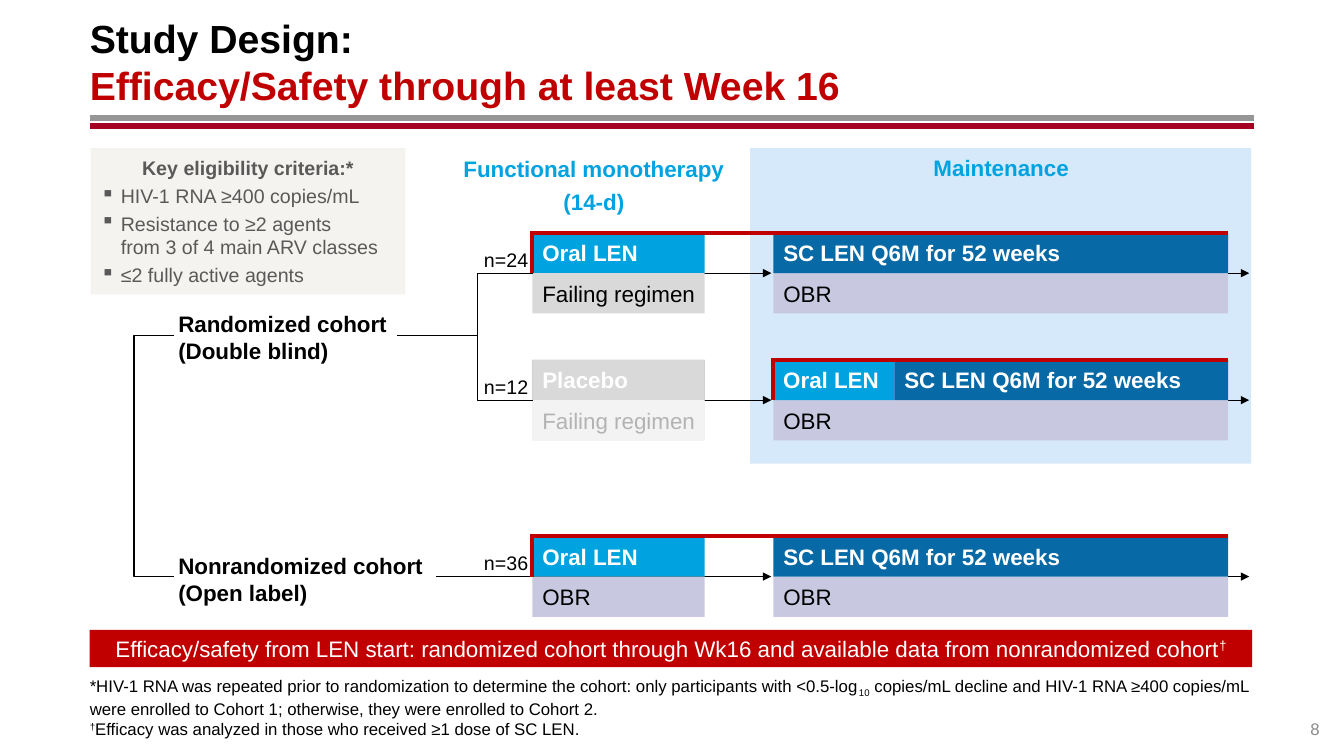
import pptx
import pptx.dml.color
import pptx.enum.shapes
import pptx.enum.text
import pptx.oxml
import pptx.oxml.ns
import pptx.util
from pptx.util import Inches

SHAPES = pptx.enum.shapes.MSO_SHAPE
ALIGN = pptx.enum.text.PP_ALIGN
ANCHOR = pptx.enum.text.MSO_ANCHOR
RED, CYAN, BLUE, LILAC, GREY = "C00000", "00A3E0", "0769A5", "C8C9E1", "D9D9D9"
BLACK, WHITE, DARK_GREY = "000000", "FFFFFF", "595959"
ROW = 0.4
FIRST_X, FIRST_W = 5.28, 1.71
MAINT_X, MAINT_W = 7.67, 4.51
RANDOM_Y, PLACEBO_Y, OPEN_Y = 2.71, 3.97, 5.72


def rgb(value):
    return pptx.dml.color.RGBColor.from_string(value)


def xml(tag, inner="", attributes=""):
    namespace = pptx.oxml.ns.nsdecls("a")
    return pptx.oxml.parse_xml(f"<a:{tag} {namespace} {attributes}>{inner}</a:{tag}>")


def color_xml(color):
    return f'<a:solidFill><a:srgbClr val="{color}"/></a:solidFill>'


def place(item, left, top, width, height):
    item.left, item.top = Inches(left), Inches(top)
    item.width, item.height = Inches(width), Inches(height)


def frame_of(item, anchor=ANCHOR.MIDDLE, insets=(0.1, 0.05, 0.1, 0.05), wrap=True):
    frame = item.text_frame
    frame.auto_size = pptx.enum.text.MSO_AUTO_SIZE.NONE
    frame.word_wrap = wrap
    frame.vertical_anchor = anchor
    frame.margin_left, frame.margin_top, frame.margin_right, frame.margin_bottom = map(Inches, insets)
    return frame


def add_run(paragraph, text, size, color, bold=False, baseline=0):
    run = paragraph.add_run()
    run.text = text
    run.font.name = "Arial"
    run.font.size = pptx.util.Pt(size)
    run.font.bold = bold
    run.font.color.rgb = rgb(color)
    if baseline:
        run.font._element.set("baseline", str(baseline * 1000))


def write(frame, lines, size, color, bold=False, align=ALIGN.LEFT, after=0):
    for number, line in enumerate(lines):
        paragraph = frame.add_paragraph() if number else frame.paragraphs[0]
        paragraph.alignment = align
        paragraph.space_after = pptx.util.Pt(after)
        add_run(paragraph, line, size, color, bold)


def add_rect(slide, left, top, width, height, fill):
    rect = slide.shapes.add_shape(SHAPES.RECTANGLE, *map(Inches, (left, top, width, height)))
    rect.shadow.inherit = False
    rect.line.fill.background()
    rect.fill.solid()
    rect.fill.fore_color.rgb = rgb(fill)
    return rect


def add_drug(slide, left, top, width, fill, text, color=WHITE, bold=True):
    drug = add_rect(slide, left, top, width, ROW, fill)
    write(frame_of(drug, wrap=False), [text], 16, color, bold)


def add_label(slide, at, lines, size, color, bold=False, align=ALIGN.LEFT, after=0, **frame):
    label = slide.shapes.add_textbox(*map(Inches, at))
    write(frame_of(label, **frame), lines, size, color, bold, align, after)


def add_line(slide, start, end, y, color=BLACK, width=0.75, arrow=False):
    line = slide.shapes.add_connector(
        pptx.enum.shapes.MSO_CONNECTOR.STRAIGHT, Inches(start), Inches(y), Inches(end), Inches(y))
    line.line.color.rgb = rgb(color)
    line.line.width = pptx.util.Pt(width)
    if arrow:
        line.line._get_or_add_ln().append(xml("tailEnd", attributes='type="triangle"'))
    line._element.spPr.append(xml("effectLst"))


def add_bracket(slide, left, top, width, height):
    bracket = slide.shapes.add_shape(SHAPES.RIGHT_BRACKET, *map(Inches, (left, top, width, height)))
    bracket.adjustments[0] = 0
    bracket.shadow.inherit = False
    bracket.fill.background()
    bracket.line.color.rgb = rgb(BLACK)
    bracket.line.width = pptx.util.Pt(0.75)
    bracket._element.spPr.get_or_add_xfrm().set("flipH", "1")


def add_period(slide, left, top, width):
    """Mark an analysed treatment period by a red left and top border."""
    table = slide.shapes.add_table(1, 1, *map(Inches, (left, top, width, ROW))).table
    table.first_row = table.horz_banding = False
    cell = table.cell(0, 0)
    cell.margin_left = cell.margin_right = cell.margin_top = cell.margin_bottom = 0
    cell.fill.background()
    properties = cell._tc.get_or_add_tcPr()
    borders = (("lnL", True), ("lnR", False), ("lnT", True), ("lnB", False))
    for position, (side, shown) in enumerate(borders):
        inner = color_xml(RED) if shown else "<a:noFill/>"
        properties.insert(position, xml(side, inner, 'w="38100"'))


def add_arm(slide, y, count, first, background):
    """Draw one arm: its arrows, patient count, first phase and background regimen."""
    add_line(slide, FIRST_X, MAINT_X - 0.02, y, arrow=True)
    add_line(slide, MAINT_X + MAINT_W, 12.39, y, arrow=True)
    add_label(slide, (4.77, y - 0.22, 0.5, 0.2), [count], 14, BLACK, align=ALIGN.CENTER,
              anchor=ANCHOR.BOTTOM, insets=(0, 0, 0, 0))
    add_drug(slide, FIRST_X, y - ROW, FIRST_W, *first)
    add_drug(slide, FIRST_X, y, FIRST_W, *background, BLACK, False)
    add_drug(slide, MAINT_X, y, MAINT_W, LILAC, "OBR", BLACK, False)


def add_title(slide):
    title = slide.shapes.title
    place(title, 0.89, 0.18, 11.55, 0.86)
    paragraph = frame_of(title, insets=(0, 0.05, 0.1, 0.05)).paragraphs[0]
    paragraph.alignment = ALIGN.LEFT
    add_run(paragraph, "Study Design:", 28, BLACK, True)
    paragraph.add_line_break()
    add_run(paragraph, "Efficacy/Safety through at least Week 16", 28, RED, True)


def add_footnotes(slide):
    notes = slide.placeholders[1]
    place(notes, 0.89, 6.83, 11.55, 0.5)
    frame = frame_of(notes, ANCHOR.BOTTOM, (0, 0, 0, 0))
    footnotes = (
        (("*HIV-1 RNA was repeated prior to randomization to determine the cohort: "
          "only participants with <0.5-log", 0), ("10", -25),
         (" copies/mL decline and HIV-1 RNA ≥400 copies/mL were enrolled to Cohort 1; "
          "otherwise, they were enrolled to Cohort 2.", 0)),
        (("†", 30), ("Efficacy was analyzed in those who received ≥1 dose of SC LEN.", 0)),
    )
    for number, parts in enumerate(footnotes):
        paragraph = frame.add_paragraph() if number else frame.paragraphs[0]
        paragraph.space_before = 0
        properties = paragraph._p.get_or_add_pPr()
        properties.set("marL", "0")
        properties.set("indent", "0")
        properties.append(xml("buNone"))
        for text, baseline in parts:
            add_run(paragraph, text, 12, BLACK, baseline=baseline)


def add_criteria(slide):
    frame = frame_of(add_rect(slide, 0.9, 1.47, 3.12, 1.45, "F5F3EF"))
    write(frame, ["Key eligibility criteria:*"], 14, DARK_GREY, True, ALIGN.CENTER)
    frame.paragraphs[0].space_before = pptx.util.Pt(3)
    criteria = (("HIV-1 RNA ≥400 copies/mL",),
                ("Resistance to ≥2 agents", "from 3 of 4 main ARV classes"),
                ("≤2 fully active agents",))
    for lines in criteria:
        paragraph = frame.add_paragraph()
        paragraph.alignment = ALIGN.LEFT
        paragraph.space_before = pptx.util.Pt(3)
        properties = paragraph._p.get_or_add_pPr()
        properties.set("marL", str(Inches(0.2)))
        properties.set("indent", str(Inches(-0.2)))
        properties.append(xml("buChar", attributes='char="▪"'))
        for number, line in enumerate(lines):
            if number:
                paragraph.add_line_break()
            add_run(paragraph, line, 14, DARK_GREY)


def main():
    deck = pptx.Presentation()
    deck.slide_width, deck.slide_height = Inches(13.33), Inches(7.5)
    slide = deck.slides.add_slide(deck.slide_layouts[1])
    add_title(slide)
    add_footnotes(slide)
    add_line(slide, 0.89, 12.44, 1.17, "969696", 4.25)
    add_line(slide, 0.89, 12.44, 1.25, "A50021", 4.25)
    add_rect(slide, 7.44, 1.47, 4.97, 3.13, "D5E9FA")
    phases = (((4.54, 1.48, 2.7, 0.71), ["Functional monotherapy", "(14-d)"]),
              ((8.43, 1.48, 3, 0.37), ["Maintenance"]))
    for at, lines in phases:
        add_label(slide, at, lines, 16, CYAN, True, ALIGN.CENTER, 4, insets=(0, 0.05, 0, 0.05))

    add_line(slide, 3.94, 4.74, 3.33)
    add_line(slide, 4.32, FIRST_X, OPEN_Y)
    oral, injection = (CYAN, "Oral LEN"), (BLUE, "SC LEN Q6M for 52 weeks")
    failing = (GREY, "Failing regimen")
    add_arm(slide, RANDOM_Y, "n=24", oral, failing)
    add_arm(slide, PLACEBO_Y, "n=12", ("808080", "Placebo"), failing)
    add_arm(slide, OPEN_Y, "n=36", oral, (LILAC, "OBR"))
    for y in (RANDOM_Y, OPEN_Y):
        add_drug(slide, MAINT_X, y - ROW, MAINT_W, *injection)
        add_period(slide, FIRST_X, y - ROW, MAINT_X + MAINT_W - FIRST_X)
    add_drug(slide, MAINT_X, PLACEBO_Y - ROW, 1.2, *oral)
    add_drug(slide, MAINT_X + 1.2, PLACEBO_Y - ROW, MAINT_W - 1.2, *injection)
    add_period(slide, MAINT_X, PLACEBO_Y - ROW, MAINT_W)
    veil = add_rect(slide, FIRST_X, PLACEBO_Y - ROW, FIRST_W, 2 * ROW, WHITE)
    veil.fill._xPr.find(".//" + pptx.oxml.ns.qn("a:srgbClr")).append(xml("alpha", attributes='val="70000"'))

    add_label(slide, (1.67, 3.02, 2.52, 0.64), ["Randomized cohort", "(Double blind)"], 16, BLACK, True)
    open_cohort = add_rect(slide, 1.67, 5.34, 2.65, 0.81, WHITE)
    write(frame_of(open_cohort), ["Nonrandomized cohort (Open label)"], 16, BLACK, True)
    add_bracket(slide, 4.74, RANDOM_Y, 0.55, PLACEBO_Y - RANDOM_Y)
    add_bracket(slide, 1.33, 3.33, 0.4, OPEN_Y - 3.33)
    add_criteria(slide)
    conclusion = frame_of(add_rect(slide, 0.89, 6.25, 11.53, 0.37, RED))
    write(conclusion, ["Efficacy/safety from LEN start: randomized cohort through Wk16 "
                       "and available data from nonrandomized cohort"], 16, WHITE, align=ALIGN.CENTER)
    add_run(conclusion.paragraphs[0], "†", 16, WHITE, baseline=30)
    add_label(slide, (12.44, 6.93, 0.65, 0.4), ["8"], 12, "8C8C8C", align=ALIGN.RIGHT,
              anchor=ANCHOR.BOTTOM, insets=(0, 0, 0, 0))
    deck.save("out.pptx")


if __name__ == "__main__":
    main()
